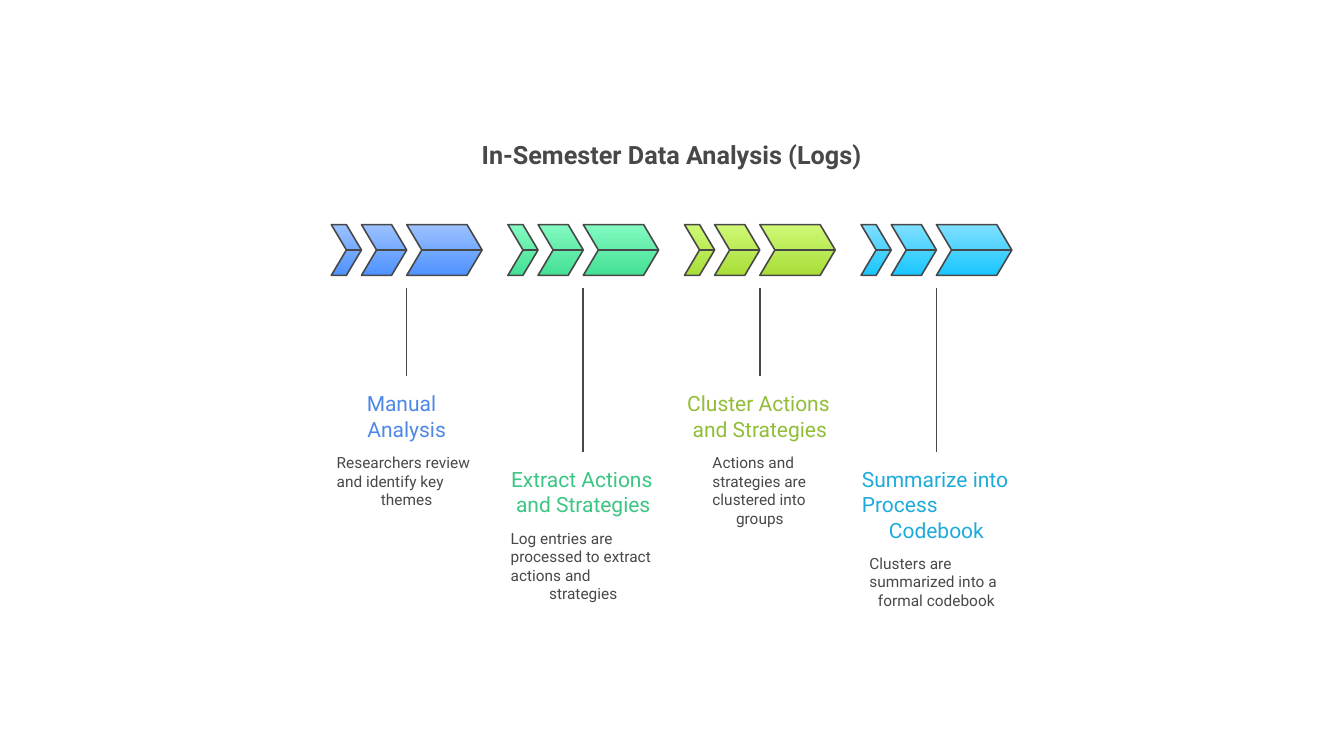
from pptx import Presentation
from pptx.dml.color import RGBColor
from pptx.enum import text
from pptx.util import Cm, Pt

COLORS = {"ink": "484848"}
FONT = "Roboto"

# Arrow geometry in cm: each arrow is three chevrons on a unit grid
UNIT, HALF_HEIGHT = 0.38, 0.64
CHEVRONS = [(5, 10), (2, 5), (0, 2)]
ARROW_WIDTH = 10 * UNIT
ARROW_TOP, FIRST_CENTER, PITCH = 5.66, 10.25, 4.45
ARROW_MID = ARROW_TOP + HALF_HEIGHT
STEM_TOP, STEM_BOTTOM, DROP = 7.25, 9.47, 1.91
LABEL_GAP, DETAIL_GAP = 0.38, 0.31
LABEL_LINE, DETAIL_LINE = 0.63, 0.47

# Label, label width, detail, detail width, gradient top and bottom, label colour
STEPS = [
    ("Manual\nAnalysis", 2.01,
     "Researchers review\nand identify key\nthemes", 3.53,
     "9CC2FF", "4F92FF", "4E88E7"),
    ("Extract Actions\nand Strategies", 3.64,
     "Log entries are\nprocessed to extract\nactions and\nstrategies", 3.66,
     "83FAC1", "44E095", "3CC583"),
    ("Cluster Actions\nand Strategies", 3.66,
     "Actions and\nstrategies are\nclustered into\ngroups", 2.39,
     "CFF976", "A8DD38", "92BD39"),
    ("Summarize into\nProcess\nCodebook", 3.76,
     "Clusters are\nsummarized into a\nformal codebook", 3.38,
     "7FDFFF", "1AC6FF", "1EABDA"),
]


def rgb(color):
    return RGBColor.from_string(COLORS.get(color, color))


def write(sp, content, *, size, color="ink", bold=False, wrap=False):
    tf = sp.text_frame
    tf.margin_left = tf.margin_top = tf.margin_right = tf.margin_bottom = 0
    tf.word_wrap = wrap
    tf.auto_size = text.MSO_AUTO_SIZE.SHAPE_TO_FIT_TEXT
    tf.vertical_anchor = text.MSO_ANCHOR.TOP
    p = tf.paragraphs[0]
    p.alignment = text.PP_ALIGN.CENTER
    r = p.add_run()
    r.text = content
    r.font.name, r.font.size, r.font.bold = FONT, Pt(size), bold
    r.font.color.rgb = rgb(color)


def add_label(s, center, top, width, line_height, content, **style):
    height = line_height * len(content.split("\n"))
    sp = s.shapes.add_textbox(Cm(center - width / 2), Cm(top), Cm(width), Cm(height))
    write(sp, content, **style)
    return top + height


def chevron(left, start, end):
    x1, x2 = left + start * UNIT, left + end * UNIT
    bottom = ARROW_TOP + 2 * HALF_HEIGHT
    return [(x1, ARROW_TOP), (x2 - UNIT, ARROW_TOP), (x2, ARROW_MID),
            (x2 - UNIT, bottom), (x1, bottom), (x1 + UNIT, ARROW_MID)]


def add_freeform(s, closed, strokes=()):
    """Draw closed outlines and open strokes as one shape."""
    contours = [(points, True) for points in closed]
    contours += [(points, False) for points in strokes]
    builder = None
    for points, close in contours:
        first, *rest = [(Cm(x), Cm(y)) for x, y in points]
        if builder is None:
            builder = s.shapes.build_freeform(*first)
        else:
            builder.move_to(*first)
        builder.add_line_segments(rest, close=close)
    sp = builder.convert_to_shape()
    sp.shadow.inherit = False
    return sp


def add_arrow(s, center, stem_bottom, light, dark):
    left = center - ARROW_WIDTH / 2
    chevrons = [chevron(left, *span) for span in CHEVRONS]

    # Gradient body
    body = add_freeform(s, chevrons)
    body.line.fill.background()
    body.fill.gradient()
    body.fill.gradient_angle = 270
    for stop, color in zip(body.fill.gradient_stops, (light, dark)):
        stop.color.rgb = rgb(color)

    # Outline with the centre folds and the stem
    folds = [[(left + (start + 1) * UNIT, ARROW_MID), (left + end * UNIT, ARROW_MID)]
             for start, end in CHEVRONS]
    stem = [(center, STEM_TOP), (center, stem_bottom)]
    outline = add_freeform(s, chevrons, folds + [stem])
    outline.fill.background()
    outline.line.color.rgb = rgb("ink")
    outline.line.width = Pt(1.12)


def add_step(s, index, step):
    label, label_width, detail, detail_width, light, dark, color = step
    center = FIRST_CENTER + index * PITCH
    stem_bottom = STEM_BOTTOM + index % 2 * DROP
    add_arrow(s, center, stem_bottom, light, dark)
    bottom = add_label(s, center, stem_bottom + LABEL_GAP, label_width,
                       LABEL_LINE, label, size=15, color=color)
    add_label(s, center, bottom + DETAIL_GAP, detail_width,
              DETAIL_LINE, detail, size=11)


def main():
    prs = Presentation()
    prs.slide_width, prs.slide_height = Cm(33.87), Cm(19.05)
    s = prs.slides.add_slide(prs.slide_layouts[5])

    # Title
    title = s.shapes.title
    title.left, title.top, title.width, title.height = Cm(9.7), Cm(3.51), Cm(14.45), Cm(0.76)
    write(title, "In-Semester Data Analysis (Logs)", size=18, bold=True, wrap=True)

    # Process steps, alternating between high and low labels
    for index, step in enumerate(STEPS):
        add_step(s, index, step)

    prs.save("out.pptx")


if __name__ == "__main__":
    main()
